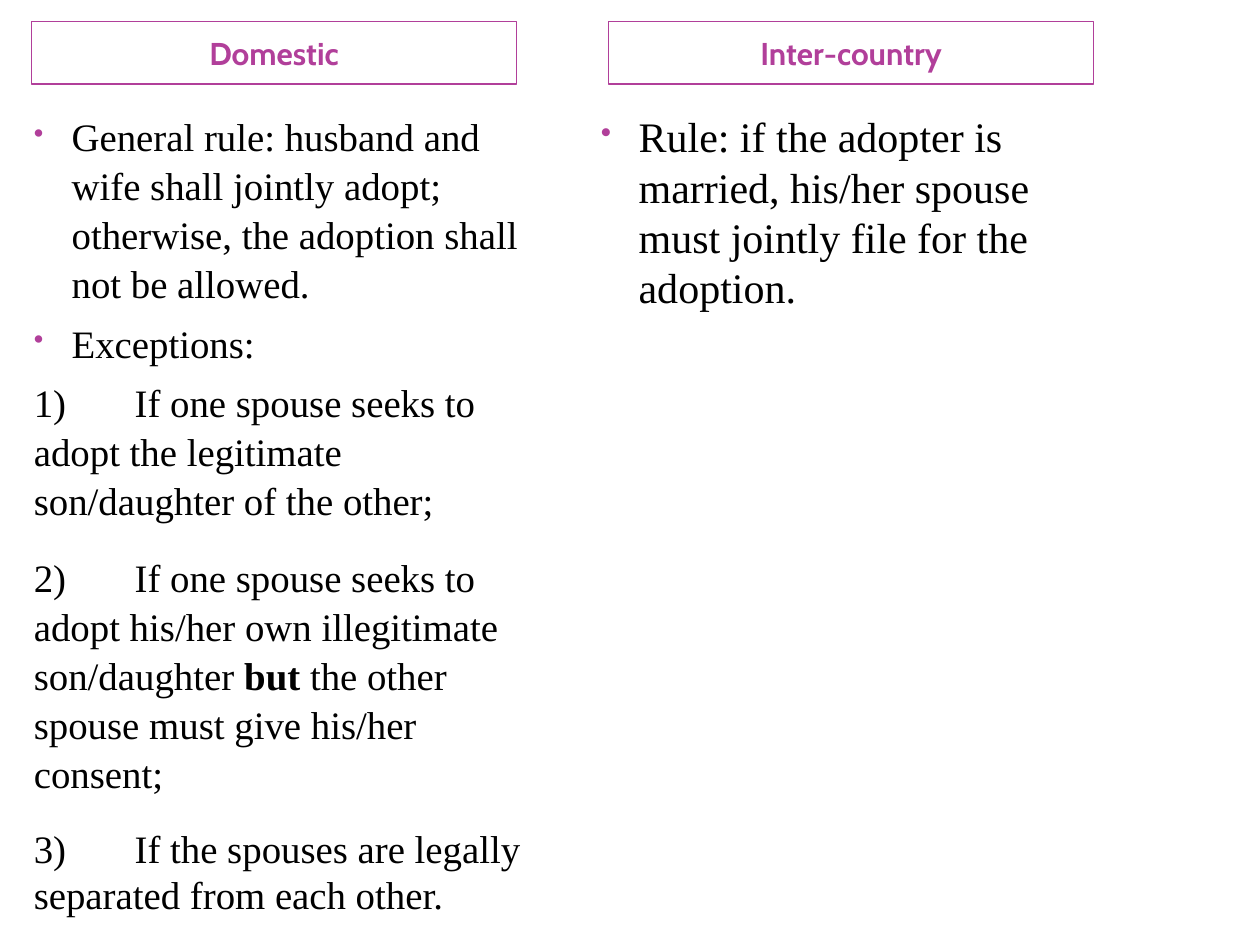
"""Build a slide comparing the joint adoption rule in domestic and inter-country cases."""
from lxml import etree
from pptx import Presentation
from pptx import util as u
from pptx.dml.color import RGBColor
from pptx.enum import shapes, text
from pptx.oxml import ns

HUES = {"back": "FFFFFF", "plum": "B13F9A", "ink": "000000"}


def hue(name):
    return RGBColor.from_string(HUES[name])


def write(frame, words, first=False, size=18, font="Times New Roman", color="ink",
          bold=False, align=None, line=None, after=0, mark=None, tab=None):
    para = frame.paragraphs[0] if first else frame.add_paragraph()
    props = para._p.get_or_add_pPr()
    if mark:
        props.set("marL", str(u.Inches(0.3)))
        props.set("indent", str(-u.Inches(0.3)))
        tint = etree.SubElement(props, ns.qn("a:buClr"))
        etree.SubElement(tint, ns.qn("a:srgbClr"), val=HUES["plum"])
        etree.SubElement(props, ns.qn("a:buSzPct"), val="73000")
        etree.SubElement(props, ns.qn("a:buChar"), char=mark)
    if tab:
        stops = etree.SubElement(props, ns.qn("a:tabLst"))
        etree.SubElement(stops, ns.qn("a:tab"), pos=str(u.Inches(tab)), algn="l")
    para.alignment = align
    para.line_spacing = line
    para.space_before = u.Pt(0 if first else 6)
    para.space_after = u.Pt(after)
    for turn, part in enumerate(words.split("**")):
        run = para.add_run()
        run.text = part
        run.font.name = font
        run.font.size = u.Pt(size)
        run.font.bold = bold or turn % 2 == 1
        run.font.color.rgb = hue(color)


deck = Presentation()
deck.slide_width, deck.slide_height = u.Inches(10), u.Inches(7.5)
slide = deck.slides.add_slide(deck.slide_layouts[6])
slide.background.fill.solid()
slide.background.fill.fore_color.rgb = hue("back")

for left, title in [(0.25, "Domestic"), (4.83, "Inter-country")]:
    head = slide.shapes.add_shape(shapes.MSO_SHAPE.RECTANGLE, u.Inches(left),
                                  u.Inches(0.17), u.Inches(3.85), u.Inches(0.5))
    head.shadow.inherit = False
    head.fill.background()
    head.line.color.rgb = hue("plum")
    head.line.width = u.Pt(1)
    head.text_frame.word_wrap = True
    head.text_frame.vertical_anchor = text.MSO_ANCHOR.MIDDLE
    write(head.text_frame, title, first=True, font="Cabin", color="plum",
          bold=True, align=text.PP_ALIGN.CENTER)

bullet = {"mark": "•"}
case = {"tab": 0.8, "after": 10}
columns = [
    (0.17, 4.18, 6.67, 22.2, 1.05, [
        ("General rule: husband and wife shall jointly adopt; "
         "otherwise, the adoption shall not be allowed.", bullet),
        ("Exceptions:", bullet),
        ("1)\tIf one spouse seeks to adopt the legitimate son/daughter of the other;", case),
        ("2)\tIf one spouse seeks to adopt his/her own illegitimate son/daughter "
         "**but** the other spouse must give his/her consent;", case),
        ("3)\tIf the spouses are legally separated from each other.",
         {"tab": 0.8, "line": 1.0}),
    ]),
    (4.67, 4.25, 6.42, 24, 1.0, [
        ("Rule: if the adopter is married, his/her spouse must jointly file "
         "for the adoption.", bullet),
    ]),
]
for left, width, height, size, line, items in columns:
    box = slide.shapes.add_textbox(u.Inches(left), u.Inches(0.83),
                                   u.Inches(width), u.Inches(height))
    box.text_frame.word_wrap = True
    for rank, (words, style) in enumerate(items):
        write(box.text_frame, words, first=rank == 0, size=size,
              **{"line": line, **style})

deck.save("out.pptx")
